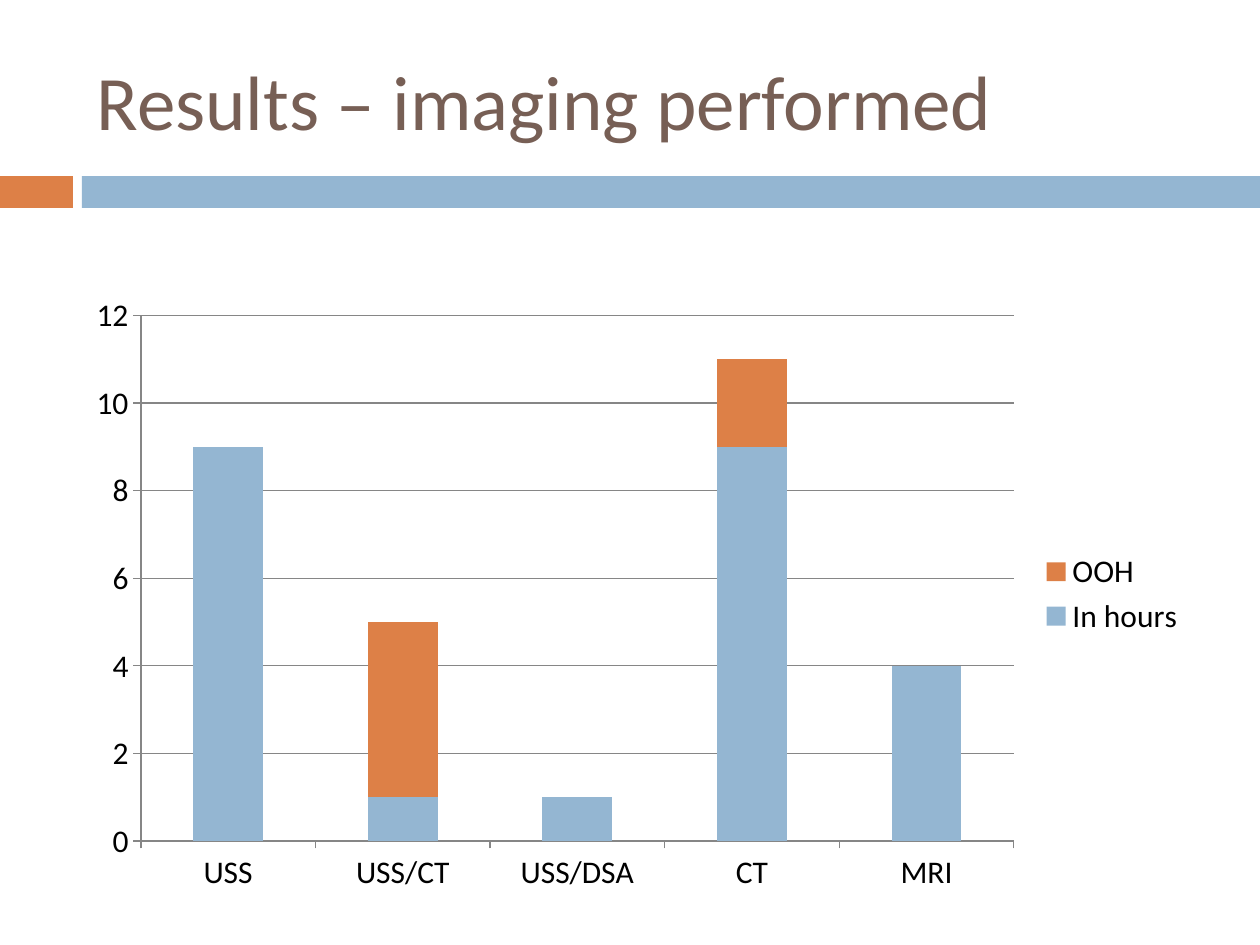
from dataclasses import dataclass

from pptx import Presentation
from pptx.chart.data import CategoryChartData
from pptx.dml.color import RGBColor as RGB
from pptx.enum.chart import XL_CHART_TYPE as CT, XL_LEGEND_POSITION as LP, XL_TICK_MARK as TM
from pptx.enum.shapes import MSO_SHAPE as SHAPE
from pptx.enum.text import MSO_ANCHOR as ANCHOR, PP_ALIGN as ALIGN
from pptx.util import Pt

PX = 914400 // 126


@dataclass(frozen=True)
class Theme:
    font: str = "Calibri"
    title: RGB = RGB(0x77, 0x5F, 0x55)
    text: RGB = RGB(0, 0, 0)
    blue: RGB = RGB(0x94, 0xB6, 0xD2)
    orange: RGB = RGB(0xDD, 0x80, 0x47)
    axis: RGB = RGB(0x86, 0x86, 0x86)
    title_size: Pt = Pt(44)
    chart_size: Pt = Pt(18)


def set_attrs(obj, **values):
    for name, value in values.items():
        setattr(obj, name, value)


class Deck:
    def __init__(self, prs, theme):
        self.theme = theme
        self.slide = prs.slides.add_slide(prs.slide_layouts[5])

    def box(self, *px):
        return [n * PX for n in px]

    def style(self, font, size, color):
        set_attrs(font, name=self.theme.font, size=size, bold=False)
        font.color.rgb = color

    def title(self, text, *px):
        sp = self.slide.shapes.title
        set_attrs(sp, **dict(zip(("left", "top", "width", "height"), self.box(*px))))
        tf = sp.text_frame
        set_attrs(tf, word_wrap=True, vertical_anchor=ANCHOR.MIDDLE)
        p = tf.paragraphs[0]
        p.alignment = ALIGN.LEFT
        r = p.add_run()
        r.text = text
        self.style(r.font, self.theme.title_size, self.theme.title)

    def bar(self, color, *px):
        sp = self.slide.shapes.add_shape(SHAPE.RECTANGLE, *self.box(*px))
        sp.shadow.inherit = False
        sp.fill.solid()
        sp.fill.fore_color.rgb = color
        sp.line.fill.background()

    def line(self, fmt):
        fmt.line.color.rgb = self.theme.axis
        fmt.line.width = Pt(0.75)

    def stacked_chart(self, cats, series, *px):
        data = CategoryChartData()
        data.categories = cats
        for name, values, _ in series:
            data.add_series(name, values)
        chart = self.slide.shapes.add_chart(CT.COLUMN_STACKED, *self.box(*px), data).chart
        set_attrs(chart, has_title=False, has_legend=True)
        self.style(chart.font, self.theme.chart_size, self.theme.text)
        set_attrs(chart.legend, position=LP.RIGHT, include_in_layout=False)
        plot = chart.plots[0]
        set_attrs(plot, gap_width=150, overlap=100, vary_by_categories=False)
        for s, (_, _, color) in zip(plot.series, series):
            s.format.fill.solid()
            s.format.fill.fore_color.rgb = color
        for axis in (chart.category_axis, chart.value_axis):
            set_attrs(axis, major_tick_mark=TM.OUTSIDE, minor_tick_mark=TM.NONE)
            self.line(axis.format)
        set_attrs(chart.value_axis, has_major_gridlines=True,
                  minimum_scale=0, maximum_scale=12, major_unit=2)
        self.line(chart.value_axis.major_gridlines.format)


def main():
    prs = Presentation()
    set_attrs(prs, slide_width=1260 * PX, slide_height=945 * PX)
    theme = Theme()
    deck = Deck(prs, theme)
    deck.bar(theme.orange, 0, 176, 73, 32)
    deck.bar(theme.blue, 82, 176, 1178, 32)
    deck.title("Results – imaging performed", 84, 32, 1124, 136)
    deck.stacked_chart(
        ["USS", "USS/CT", "USS/DSA", "CT", "MRI"],
        [("In hours", (9, 1, 1, 9, 4), theme.blue),
         ("OOH", (0, 4, 0, 2, 0), theme.orange)],
        74, 284, 1124, 620)
    prs.save("out.pptx")


if __name__ == "__main__":
    main()
